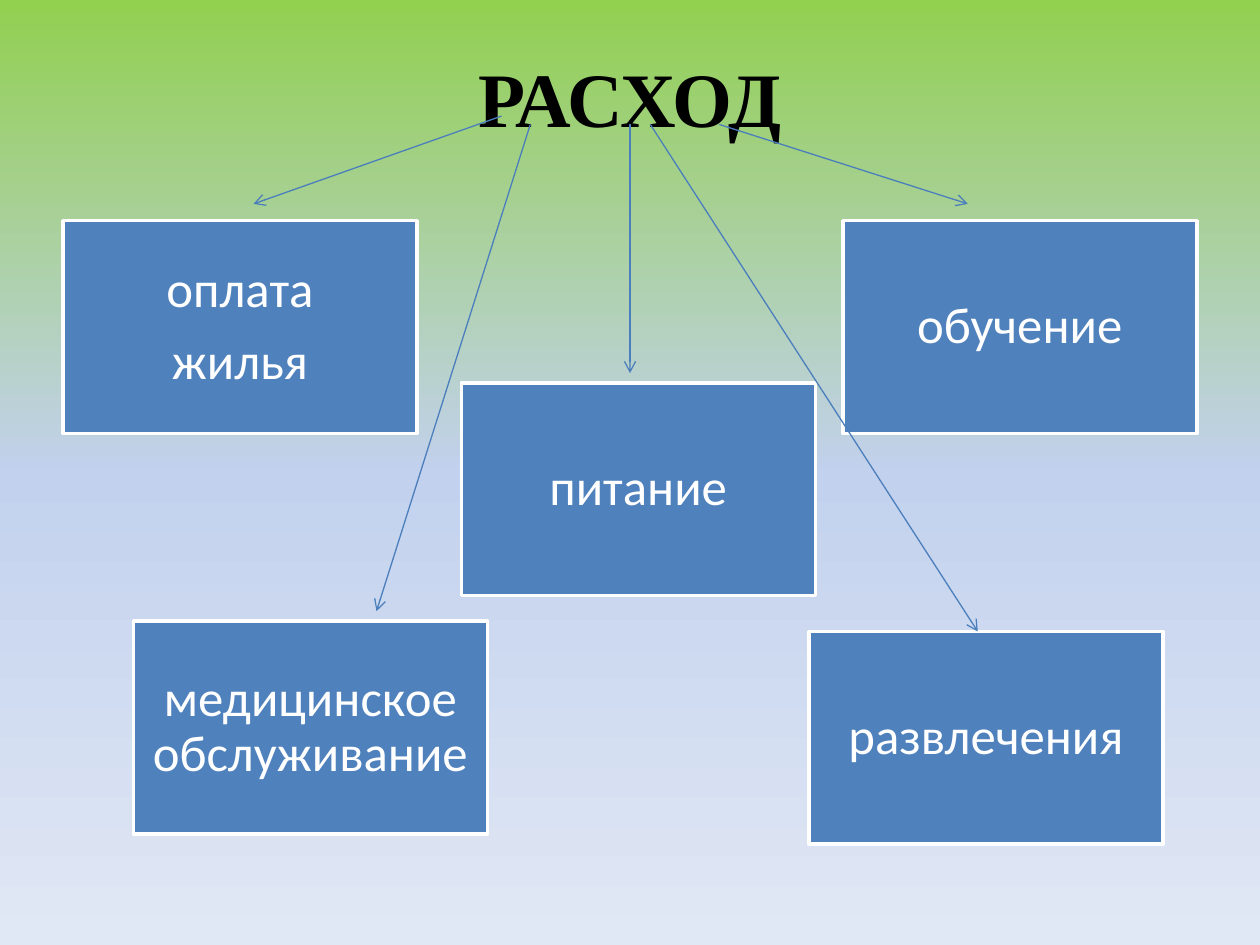
import copy

import pptx
import pptx.dml.color
import pptx.enum.shapes
import pptx.enum.text
import pptx.oxml.ns
import pptx.util
from pptx.util import Cm

# Content: lengths in cm
HEADING = "РАСХОД"
EXPENSES = [  # paragraphs, left, top, arrow start, arrow end
    (["оплата", "жилья"], 1.27, 4.45, (10.11, 2.34), (5.11, 4.11)),
    (["питание"], 9.3, 7.72, (12.7, 2.51), (12.7, 7.52)),
    (["обучение"], 16.99, 4.45, (14.5, 2.51), (19.51, 4.11)),
    (["медицинское обслуживание"], 2.69, 12.52, (10.69, 2.51), (7.59, 12.32)),
    (["развлечения"], 16.31, 12.73, (13.11, 2.51), (19.71, 12.73)),
]
BOX_WIDTH, BOX_HEIGHT, BOX_INSET = Cm(7.14), Cm(4.29), Cm(0.3)
COLORS = {
    "sky_top": "92D050", "sky_middle": "C2D1ED", "sky_bottom": "E1E8F5",
    "box": "4F81BD", "white": "FFFFFF", "arrow": "4B7EBC", "heading": "000000",
}


def color(name):
    return pptx.dml.color.RGBColor.from_string(COLORS[name])


def add_run(paragraph, words, font, size, color_name, bold=False):
    run = paragraph.add_run()
    run.text = words
    run.font.name = font
    run.font.size = pptx.util.Pt(size)
    run.font.bold = bold
    run.font.color.rgb = color(color_name)
    paragraph.alignment = pptx.enum.text.PP_ALIGN.CENTER


def paint_background(slide):
    fill = slide.background.fill
    fill.gradient()
    fill.gradient_angle = 270
    # The default gradient has two stops: add one in the middle
    stops = slide.element.find(".//" + pptx.oxml.ns.qn("a:gsLst"))
    stops.insert(1, copy.deepcopy(stops[0]))
    names = ("sky_top", "sky_middle", "sky_bottom")
    for stop, name, position in zip(fill.gradient_stops, names, (0, 0.5, 1)):
        stop.color.rgb = color(name)
        stop.position = position


def add_box(slide, paragraphs, left, top):
    box = slide.shapes.add_shape(
        pptx.enum.shapes.MSO_SHAPE.RECTANGLE,
        Cm(left), Cm(top), BOX_WIDTH, BOX_HEIGHT)
    box.shadow.inherit = False
    box.fill.solid()
    box.fill.fore_color.rgb = color("box")
    box.line.color.rgb = color("white")
    box.line.width = pptx.util.Pt(2)
    frame = box.text_frame
    frame.word_wrap = True
    frame.vertical_anchor = pptx.enum.text.MSO_ANCHOR.MIDDLE
    frame.margin_left = frame.margin_right = BOX_INSET
    frame.margin_top = frame.margin_bottom = BOX_INSET
    for number, words in enumerate(paragraphs):
        paragraph = frame.add_paragraph() if number else frame.paragraphs[0]
        paragraph.line_spacing = 0.9
        paragraph.space_after = pptx.util.Pt(10)
        add_run(paragraph, words, "Calibri", 29, "white")


def add_arrow(slide, start, end):
    arrow = slide.shapes.add_connector(
        pptx.enum.shapes.MSO_CONNECTOR.STRAIGHT,
        *(Cm(length) for length in start + end))
    arrow.line.color.rgb = color("arrow")
    arrow.line.width = pptx.util.Pt(0.75)
    properties = arrow.element.spPr
    # Open arrowhead, no shadow
    outline = properties.find(pptx.oxml.ns.qn("a:ln"))
    head = outline.makeelement(pptx.oxml.ns.qn("a:tailEnd"), {"type": "arrow"})
    outline.append(head)
    properties.append(
        properties.makeelement(pptx.oxml.ns.qn("a:effectLst"), {}))


def main():
    deck = pptx.Presentation()
    deck.slide_width, deck.slide_height = Cm(25.4), Cm(19.05)
    slide = deck.slides.add_slide(deck.slide_layouts[5])
    paint_background(slide)

    # Heading
    heading = slide.shapes.title
    heading.left, heading.top = Cm(1.27), Cm(0.76)
    heading.width, heading.height = Cm(22.86), Cm(2.36)
    heading.text_frame.vertical_anchor = pptx.enum.text.MSO_ANCHOR.MIDDLE
    add_run(heading.text_frame.paragraphs[0], HEADING,
            "Times New Roman", 44, "heading", bold=True)

    # Boxes first, so that the arrows lie on top
    for paragraphs, left, top, _, _ in EXPENSES:
        add_box(slide, paragraphs, left, top)
    for _, _, _, start, end in EXPENSES:
        add_arrow(slide, start, end)

    deck.save("out.pptx")


if __name__ == "__main__":
    main()
